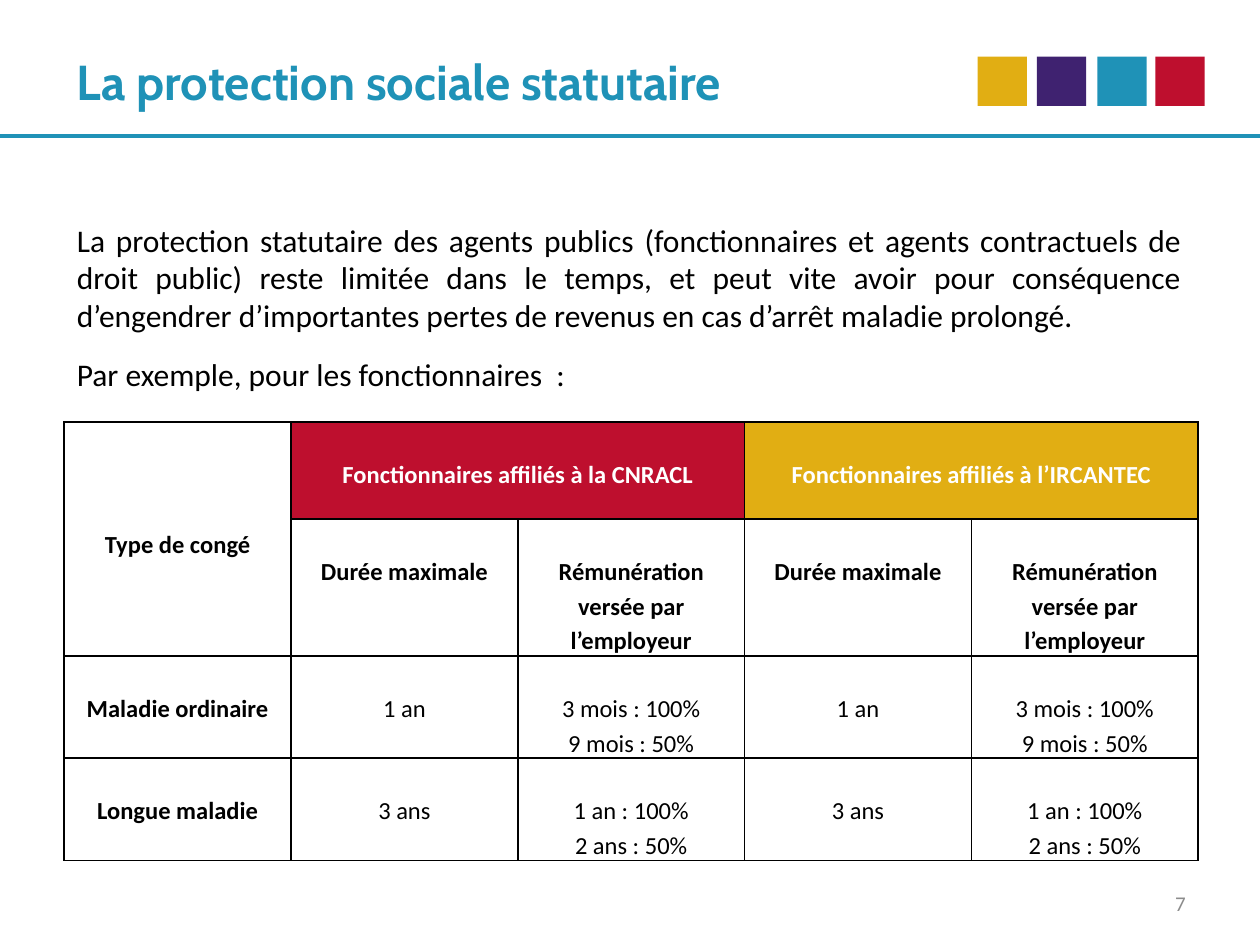
from lxml import etree
from pptx import Presentation
from pptx.dml.color import RGBColor
from pptx.enum.shapes import MSO_CONNECTOR, MSO_SHAPE
from pptx.enum.text import MSO_ANCHOR, MSO_AUTO_SIZE, PP_ALIGN
from pptx.oxml.ns import qn
from pptx.util import Inches, Pt

LEFT, CENTER, RIGHT, JUSTIFY = PP_ALIGN.LEFT, PP_ALIGN.CENTER, PP_ALIGN.RIGHT, PP_ALIGN.JUSTIFY
MIDDLE = MSO_ANCHOR.MIDDLE
COLORS = {
    "blue": "1F92B7",
    "gold": "E1AE13",
    "purple": "3F2270",
    "red": "BE0F2E",
    "black": "000000",
    "white": "FFFFFF",
    "gray": "8C8C8C",
}


def write_text(frame, text, size=14, color="black", bold=False, font="Calibri",
               align=CENTER, spacing=1.0, gap=0):
    frame.word_wrap = True
    for index, line in enumerate(text.split("\n")):
        paragraph = frame.paragraphs[0] if index == 0 else frame.add_paragraph()
        paragraph.alignment = align
        paragraph.line_spacing = spacing
        paragraph.space_before = Pt(gap if index else 0)
        run = paragraph.add_run()
        run.text = line
        run.font.name = font
        run.font.size = Pt(size)
        run.font.bold = bold
        run.font.color.rgb = RGBColor.from_string(COLORS[color])


def add_borders(cell):
    properties = cell._tc.get_or_add_tcPr()
    for index, side in enumerate(("lnL", "lnR", "lnT", "lnB")):
        border = etree.Element(qn(f"a:{side}"), w=str(Pt(1)))
        fill = etree.SubElement(border, qn("a:solidFill"))
        etree.SubElement(fill, qn("a:srgbClr"), val=COLORS["black"])
        properties.insert(index, border)


presentation = Presentation()
presentation.slide_width = Inches(10)
presentation.slide_height = Inches(7.5)
slide = presentation.slides.add_slide(presentation.slide_layouts[1])

rule = slide.shapes.add_connector(
    MSO_CONNECTOR.STRAIGHT, Inches(0), Inches(1.08), Inches(10), Inches(1.08))
rule.line.color.rgb = RGBColor.from_string(COLORS["blue"])
rule.line.width = Pt(2.25)
etree.SubElement(rule._element.spPr, qn("a:effectLst"))

title = slide.shapes.title
title.left, title.top, title.width, title.height = Inches(0.51), Inches(0.23), Inches(9), Inches(0.83)
title.text_frame.auto_size = MSO_AUTO_SIZE.NONE
title.text_frame.vertical_anchor = MIDDLE
write_text(title.text_frame, "La protection sociale statutaire",
           size=28, color="blue", bold=True, font="Cabin", align=LEFT)

body = slide.placeholders[1]
body.left, body.top, body.width, body.height = Inches(0.51), Inches(1.7), Inches(8.97), Inches(1.6)
body.text_frame.auto_size = MSO_AUTO_SIZE.NONE
write_text(
    body.text_frame,
    "La protection statutaire des agents publics (fonctionnaires et agents contractuels de "
    "droit public) reste limitée dans le temps, et peut vite avoir pour conséquence "
    "d’engendrer d’importantes pertes de revenus en cas d’arrêt maladie prolongé.\n"
    "Par exemple, pour les fonctionnaires  :",
    size=18, align=JUSTIFY, gap=12)
for paragraph in body.text_frame.paragraphs:
    properties = paragraph._p.get_or_add_pPr()
    properties.set("marL", "0")
    properties.set("indent", "0")
    etree.SubElement(properties, qn("a:buNone"))

for left, color in ((7.76, "gold"), (8.23, "purple"), (8.71, "blue"), (9.17, "red")):
    square = slide.shapes.add_shape(
        MSO_SHAPE.RECTANGLE, Inches(left), Inches(0.45), Inches(0.39), Inches(0.39))
    square.shadow.inherit = False
    square.fill.solid()
    square.fill.fore_color.rgb = RGBColor.from_string(COLORS[color])
    square.line.fill.background()

page_number = slide.shapes.add_textbox(Inches(7.18), Inches(6.97), Inches(2.33), Inches(0.4))
page_number.text_frame.vertical_anchor = MIDDLE
write_text(page_number.text_frame, "7", size=12, color="gray", align=RIGHT)

duration, pay = "Durée maximale", "Rémunération versée par l’employeur"
ordinary = ["1 an", "3 mois : 100%\n9 mois : 50%"]
long_term = ["3 ans", "1 an : 100%\n2 ans : 50%"]
rows = [
    ["Type de congé", "Fonctionnaires affiliés à la CNRACL", "",
     "Fonctionnaires affiliés à l’IRCANTEC", ""],
    ["", duration, pay, duration, pay],
    ["Maladie ordinaire"] + ordinary * 2,
    ["Longue maladie"] + long_term * 2,
]
row_heights = [0.77, 1.07, 0.81, 0.81]
header_fills = {1: "red", 3: "gold"}

table = slide.shapes.add_table(
    len(rows), 5, Inches(0.51), Inches(3.35), Inches(9), Inches(sum(row_heights))).table
for column in table.columns:
    column.width = Inches(1.8)
for row, height in zip(table.rows, row_heights):
    row.height = Inches(height)
table.cell(0, 0).merge(table.cell(1, 0))
for column_index in header_fills:
    table.cell(0, column_index).merge(table.cell(0, column_index + 1))

for row_index, texts in enumerate(rows):
    for column_index, text in enumerate(texts):
        cell = table.cell(row_index, column_index)
        header_fill = header_fills.get(column_index) if row_index == 0 else None
        cell.fill.solid()
        cell.fill.fore_color.rgb = RGBColor.from_string(COLORS[header_fill or "white"])
        add_borders(cell)
        cell.margin_left = cell.margin_right = Inches(0.07)
        cell.margin_top = Inches(0.82 if row_index == column_index == 0 else 0.27)
        cell.margin_bottom = 0
        if text:
            write_text(cell.text_frame, text, color="white" if header_fill else "black",
                       bold=row_index < 2 or column_index == 0, spacing=1.15)

presentation.save("out.pptx")
